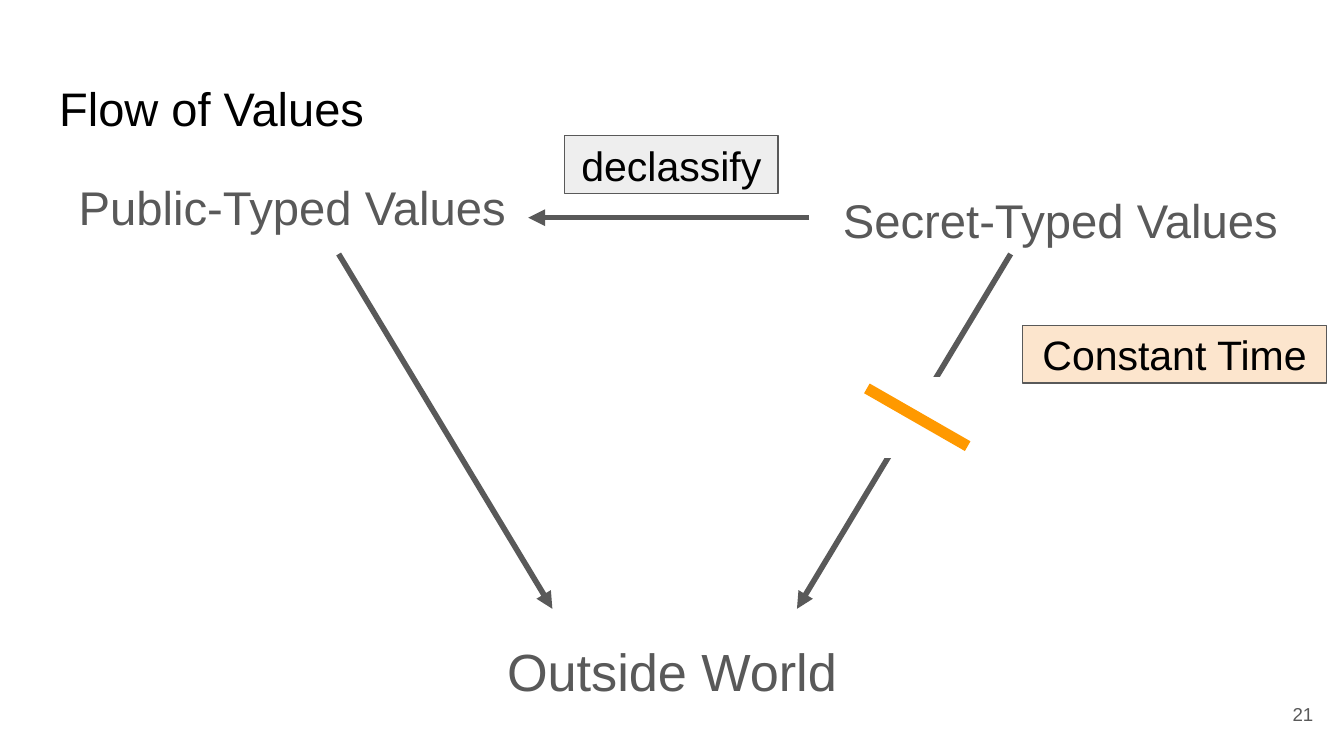
from pptx import Presentation
from pptx.dml.color import RGBColor
from pptx.enum.shapes import MSO_CONNECTOR, MSO_SHAPE
from pptx.enum.text import MSO_ANCHOR, MSO_AUTO_SIZE, PP_ALIGN
from pptx.oxml.ns import qn
from pptx.oxml.xmlchemy import OxmlElement
from pptx.util import Pt

PX = 9144  # EMU per px, 100 px to the inch
SLIDE_WIDTH = 1000
FONT = "Arial"
INSET = 10
LEFT, CENTER, RIGHT = PP_ALIGN.LEFT, PP_ALIGN.CENTER, PP_ALIGN.RIGHT
TOP, MIDDLE = MSO_ANCHOR.TOP, MSO_ANCHOR.MIDDLE
NO_AUTO_SIZE = MSO_AUTO_SIZE.NONE
RECTANGLE, STRAIGHT = MSO_SHAPE.RECTANGLE, MSO_CONNECTOR.STRAIGHT

BLACK = RGBColor(0x00, 0x00, 0x00)
WHITE = RGBColor(0xFF, 0xFF, 0xFF)
GRAY = RGBColor(0x59, 0x59, 0x59)
LIGHT_GRAY = RGBColor(0xEE, 0xEE, 0xEE)
PEACH = RGBColor(0xFC, 0xE5, 0xCD)
ORANGE = RGBColor(0xFF, 0x99, 0x00)

# Content: boxes are left, top, width, height in px
TITLE = ("Flow of Values", (34, 49, 932, 63))
VALUE_KINDS = [  # text, box, line spacing
    ("Public-Typed Values", (34, 126, 367, 63), 0.95),
    ("Secret-Typed Values", (612, 126, 354, 63), 1.15),
]
OUTSIDE_WORLD = ("Outside World", (355, 459, 290, 67))
SLIDE_NUMBER = ("21", (927, 510, 60, 43))
FLOWS = [  # start, end
    ((252, 189), (411, 453)),
    ((752, 189), (593, 453)),
    ((602, 162), (393, 162)),
]
GAP_BOX = (623, 281, 113, 59)
BARRIER = ((645, 289), (720, 332))
TAGS = [  # text, box, fill
    ("Constant Time", (761, 242, 226, 43), PEACH),
    ("declassify", (420, 101, 159, 43), LIGHT_GRAY),
]


def scaled(lengths):
    return [length * PX for length in lengths]


def place(shape, box):
    shape.left, shape.top, shape.width, shape.height = scaled(box)


def write(shape, text, size, color, alignment=CENTER, anchor=TOP, spacing=1.0, after=0):
    frame = shape.text_frame
    frame.text = text
    frame.word_wrap = True
    frame.auto_size = NO_AUTO_SIZE
    frame.vertical_anchor = anchor
    frame.margin_left = frame.margin_right = INSET * PX
    frame.margin_top = frame.margin_bottom = INSET * PX
    paragraph = frame.paragraphs[0]
    paragraph.alignment = alignment
    paragraph.line_spacing = spacing
    paragraph.space_before = Pt(0)
    paragraph.space_after = Pt(after)
    paragraph.font.name = FONT
    paragraph.font.size = Pt(size)
    paragraph.font.color.rgb = color
    return paragraph


def remove_bullet(paragraph):
    properties = paragraph._p.get_or_add_pPr()
    properties.set("marL", "0")
    properties.set("indent", "0")
    properties.insert_element_before(OxmlElement("a:buNone"), "a:tabLst", "a:defRPr", "a:extLst")


def add_box(slide, box, fill, outline):
    shape = slide.shapes.add_shape(RECTANGLE, *scaled(box))
    shape.shadow.inherit = False
    shape.fill.solid()
    shape.fill.fore_color.rgb = fill
    shape.line.color.rgb = outline
    shape.line.width = Pt(0.75)
    return shape


def add_line(slide, start, end, color, width, arrow=False):
    connector = slide.shapes.add_connector(STRAIGHT, *scaled(start + end))
    connector.line.color.rgb = color
    connector.line.width = Pt(width)
    properties = connector._element.spPr
    properties.append(OxmlElement("a:effectLst"))
    if arrow:
        arrowhead = OxmlElement("a:tailEnd")
        arrowhead.set("type", "triangle")
        properties.find(qn("a:ln")).append(arrowhead)


# Slide in 16:9
presentation = Presentation()
presentation.slide_width = SLIDE_WIDTH * PX
presentation.slide_height = presentation.slide_width * 9 // 16
slide = presentation.slides.add_slide(presentation.slide_layouts[3])
title, *bodies = slide.placeholders

# Title and the two kinds of values
text, box = TITLE
place(title, box)
write(title, text, 25.2, BLACK, LEFT)
for body, (text, box, spacing) in zip(bodies, VALUE_KINDS):
    place(body, box)
    remove_bullet(write(body, text, 25.3, GRAY, spacing=spacing, after=12))

# Destination and slide number
text, box = OUTSIDE_WORLD
write(slide.shapes.add_textbox(*scaled(box)), text, 28, GRAY, spacing=1.15, after=12)
text, box = SLIDE_NUMBER
write(slide.shapes.add_textbox(*scaled(box)), text, 10, GRAY, RIGHT, MIDDLE)

# Flows, with the secret one cut by a barrier
for start, end in FLOWS:
    add_line(slide, start, end, GRAY, 3, arrow=True)
add_box(slide, GAP_BOX, WHITE, WHITE)
add_line(slide, *BARRIER, ORANGE, 6)

# Tags beside the flows
for text, box, fill in TAGS:
    write(add_box(slide, box, fill, GRAY), text, 22, BLACK, anchor=MIDDLE)

presentation.save("out.pptx")
